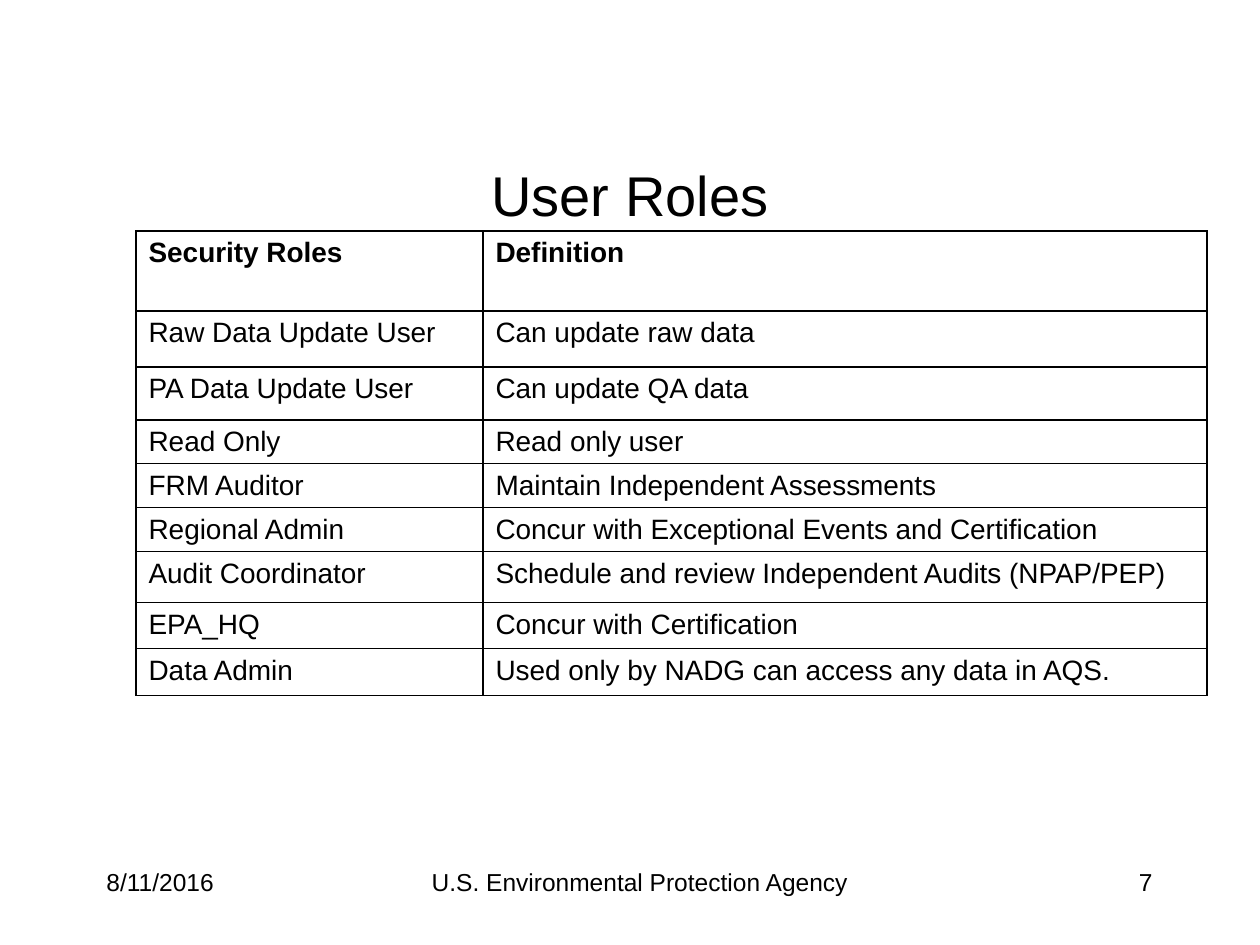
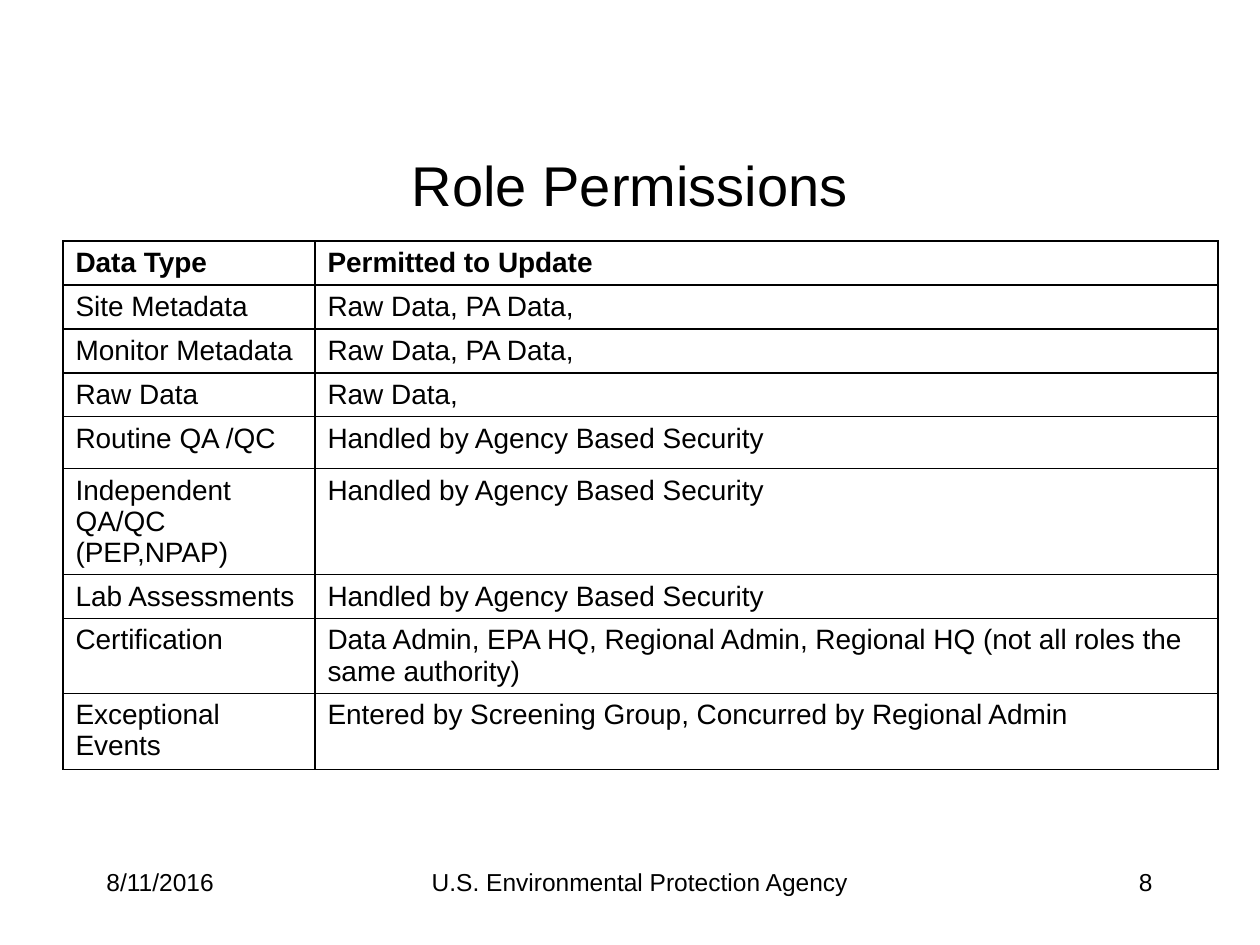
"""Build two slides that tabulate user roles and role permissions."""
import pptx
import pptx.dml.color
import pptx.enum.text
import pptx.oxml.ns
import pptx.util
from dataclasses import dataclass
from lxml import etree

PX = pptx.util.Inches(1) // 126
ALIGN = pptx.enum.text.PP_ALIGN
ANCHOR = pptx.enum.text.MSO_ANCHOR


@dataclass(frozen=True)
class Theme:
    ink: str = "000000"
    paper: str = "FFFFFF"
    font: str = "Arial"
    title: int = 32
    cell: int = 16
    footer: int = 14
    rule: int = 1


theme = Theme()


def style(p, size, align=ALIGN.LEFT, bold=False):
    p.alignment = align
    p.font.name = theme.font
    p.font.size = pptx.util.Pt(size)
    p.font.bold = bold
    p.font.color.rgb = pptx.dml.color.RGBColor.from_string(theme.ink)


def set_borders(cell):
    tc_pr = cell._tc.get_or_add_tcPr()
    for side in ("lnL", "lnR", "lnT", "lnB"):
        ln = etree.SubElement(tc_pr, pptx.oxml.ns.qn(f"a:{side}"), w=str(pptx.util.Pt(theme.rule)))
        fill = etree.SubElement(ln, pptx.oxml.ns.qn("a:solidFill"))
        etree.SubElement(fill, pptx.oxml.ns.qn("a:srgbClr"), val=theme.ink)


slides = [
    {
        "title": "User Roles",
        "title_box": (105, 136, 1050, 116),
        "number": 7,
        "origin": (136, 231),
        "columns": (347, 724),
        "heights": (80, 56, 53, 43, 44, 44, 51, 46, 47),
        "rows": [
            ("Security Roles", "Definition"),
            ("Raw Data Update User", "Can update raw data"),
            ("PA Data Update User", "Can update QA data"),
            ("Read Only", "Read only user"),
            ("FRM Auditor", "Maintain Independent Assessments"),
            ("Regional Admin", "Concur with Exceptional Events and Certification"),
            ("Audit Coordinator", "Schedule and review Independent Audits (NPAP/PEP)"),
            ("EPA_HQ", "Concur with Certification"),
            ("Data Admin", "Used only by NADG can access any data in AQS."),
        ],
    },
    {
        "title": "Role Permissions",
        "title_box": (105, 147, 1050, 74),
        "number": 8,
        "origin": (63, 241),
        "columns": (252, 903),
        "heights": (44, 44, 44, 43, 52, 106, 44, 74, 76),
        "rows": [
            ("Data Type", "Permitted to Update"),
            ("Site Metadata", "Raw Data, PA Data,"),
            ("Monitor Metadata", "Raw Data, PA Data,"),
            ("Raw Data", "Raw Data,"),
            ("Routine QA /QC", "Handled by Agency Based Security"),
            ("Independent QA/QC (PEP,NPAP)", "Handled by Agency Based Security"),
            ("Lab Assessments", "Handled by Agency Based Security"),
            ("Certification", "Data Admin, EPA HQ, Regional Admin, Regional HQ "
                              "(not all roles the same authority)"),
            ("Exceptional Events", "Entered by Screening Group, Concurred by Regional Admin"),
        ],
    },
]

prs = pptx.Presentation()
prs.slide_width = 1260 * PX
prs.slide_height = 945 * PX

for content in slides:
    s = prs.slides.add_slide(prs.slide_layouts[5])

    title = s.shapes.title
    title.left, title.top, title.width, title.height = (v * PX for v in content["title_box"])
    tf = title.text_frame
    tf.text = content["title"]
    tf.vertical_anchor = ANCHOR.MIDDLE
    tf.auto_size = pptx.enum.text.MSO_AUTO_SIZE.NONE
    style(tf.paragraphs[0], theme.title, ALIGN.CENTER)

    rows, columns, heights = content["rows"], content["columns"], content["heights"]
    x, y = content["origin"]
    table = s.shapes.add_table(len(rows), len(columns), x * PX, y * PX,
                               sum(columns) * PX, sum(heights) * PX).table
    table.horz_banding = False
    for column, width in zip(table.columns, columns):
        column.width = width * PX
    for i, (row, height, texts) in enumerate(zip(table.rows, heights, rows)):
        row.height = height * PX
        for cell, text in zip(row.cells, texts):
            cell.text = text
            style(cell.text_frame.paragraphs[0], theme.cell, bold=i == 0)
            set_borders(cell)
            cell.fill.solid()
            cell.fill.fore_color.rgb = pptx.dml.color.RGBColor.from_string(theme.paper)

    footers = [
        ("8/11/2016", 94, 262, ALIGN.LEFT),
        ("U.S. Environmental Protection Agency", 262, 756, ALIGN.CENTER),
        (str(content["number"]), 903, 262, ALIGN.RIGHT),
    ]
    for text, left, width, align in footers:
        tf = s.shapes.add_textbox(left * PX, 861 * PX, width * PX, 63 * PX).text_frame
        tf.word_wrap = True
        tf.text = text
        style(tf.paragraphs[0], theme.footer, align)

prs.save("out.pptx")
